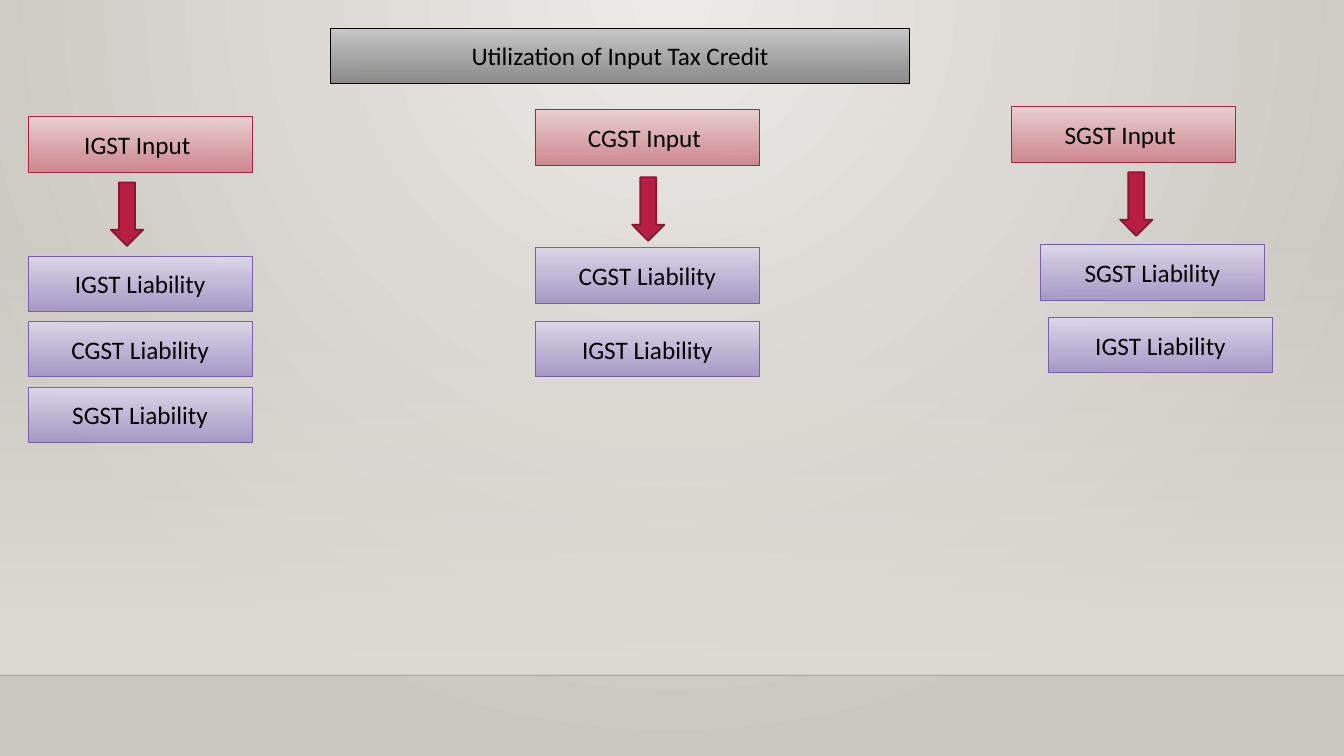
"""Build a slide showing how input tax credit is set off against GST liabilities."""
from lxml import etree
from pptx import Presentation
from pptx.dml.color import RGBColor
from pptx.enum.shapes import MSO_CONNECTOR, MSO_SHAPE
from pptx.enum.text import MSO_ANCHOR, PP_ALIGN
from pptx.oxml.ns import qn
from pptx.util import Inches, Pt

RECTANGLE, DOWN_ARROW = MSO_SHAPE.RECTANGLE, MSO_SHAPE.DOWN_ARROW
STRAIGHT = MSO_CONNECTOR.STRAIGHT
MIDDLE, CENTER = MSO_ANCHOR.MIDDLE, PP_ALIGN.CENTER

THEME = {
    "font": {"name": "Calibri", "size": Pt(18), "bold": False},
    "text": "000000",
    "backdrop": ("ECEAE7", "CAC7C1"),
    "panel": "DFDBD5",
    "floor_line": "000001",
    "title": {"colors": ("C8C8C8", "848484"), "line": "000000"},
    "input": {"colors": ("EAD1D3", "CD828A"), "line": "B71E42"},
    "liability": {"colors": ("DCD8E8", "A395C6"), "line": "795FAF"},
    "arrow": {"fill": "B71E42", "line": "871631"},
}
SLIDE_WIDTH, SLIDE_HEIGHT = 13.33, 7.5
FLOOR_TOP = 6.7
BOX_WIDTH, BOX_HEIGHT = 2.22, 0.55
ARROW_WIDTH, ARROW_HEIGHT = 0.32, 0.63

FLOWS = [
    {"input": ("IGST Input ", 0.28, 1.16), "arrow": (1.1, 1.81),
     "liabilities": [("IGST Liability", 0.28, 2.54), ("CGST Liability", 0.28, 3.19),
                     ("SGST Liability", 0.28, 3.84)]},
    {"input": ("CGST Input ", 5.31, 1.09), "arrow": (6.27, 1.76),
     "liabilities": [("CGST Liability", 5.31, 2.46), ("IGST Liability", 5.31, 3.19)]},
    {"input": ("SGST Input ", 10.03, 1.06), "arrow": (11.11, 1.71),
     "liabilities": [("SGST Liability", 10.32, 2.43), ("IGST Liability", 10.4, 3.15)]},
]


def apply_gradient(fill, element, colors, alphas=(100, 100)):
    """Fill from top to bottom and return the gradient element."""
    fill.gradient()
    fill.gradient_angle = 270
    gradient = next(element.iter(qn("a:gradFill")))
    for stop, color, alpha in zip(fill.gradient_stops, colors, alphas):
        stop.color.rgb = RGBColor.from_string(color)
    for tint, alpha in zip(gradient.iter(qn("a:srgbClr")), alphas):
        if alpha < 100:
            etree.SubElement(tint, qn("a:alpha"), val=str(alpha * 1000))
    return gradient


def format_box(box, text, style):
    """Give a box its gradient, outline and centred label."""
    apply_gradient(box.fill, box._element, style["colors"], (100, 92))
    box.line.color.rgb = RGBColor.from_string(style["line"])
    box.line.width = Pt(0.75)
    frame = box.text_frame
    frame.word_wrap = True
    frame.vertical_anchor = MIDDLE
    para = frame.paragraphs[0]
    para.alignment = CENTER
    span = para.add_run()
    span.text = text
    for name, value in THEME["font"].items():
        setattr(span.font, name, value)
    span.font.color.rgb = RGBColor.from_string(THEME["text"])


deck = Presentation()
deck.slide_width, deck.slide_height = Inches(SLIDE_WIDTH), Inches(SLIDE_HEIGHT)
page = deck.slides.add_slide(deck.slide_layouts[5])

backdrop = apply_gradient(page.background.fill, page._element, THEME["backdrop"])
backdrop.remove(backdrop.find(qn("a:lin")))
glow = etree.SubElement(backdrop, qn("a:path"), {"path": "circle"})
etree.SubElement(glow, qn("a:fillToRect"), l="43000", t="0", r="43000", b="100000")

panel = page.shapes.add_shape(
    RECTANGLE, 0, Inches(2.21), Inches(SLIDE_WIDTH), Inches(FLOOR_TOP - 2.21))
panel.shadow.inherit = False
panel.line.fill.background()
apply_gradient(panel.fill, panel._element, (THEME["panel"],) * 2, (0, 100))

floor_line = page.shapes.add_connector(
    STRAIGHT, 0, Inches(FLOOR_TOP), Inches(SLIDE_WIDTH), Inches(FLOOR_TOP))
floor_line.line.color.rgb = RGBColor.from_string(THEME["floor_line"])
floor_line.line.width = Pt(1)
line_tint = next(floor_line._element.iter(qn("a:srgbClr")))
etree.SubElement(line_tint, qn("a:alpha"), val="20000")
etree.SubElement(floor_line._element.spPr, qn("a:effectLst"))

title = page.shapes.title
title.left, title.top = Inches(3.28), Inches(0.28)
title.width, title.height = Inches(5.74), Inches(BOX_HEIGHT)
format_box(title, "Utilization of Input Tax Credit", THEME["title"])

for flow in FLOWS:
    labels = [(flow["input"], THEME["input"])]
    labels += [(liability, THEME["liability"]) for liability in flow["liabilities"]]
    for (text, left, top), style in labels:
        box = page.shapes.add_shape(
            RECTANGLE, Inches(left), Inches(top), Inches(BOX_WIDTH), Inches(BOX_HEIGHT))
        box.shadow.inherit = False
        format_box(box, text, style)
    left, top = flow["arrow"]
    arrow = page.shapes.add_shape(
        DOWN_ARROW, Inches(left), Inches(top), Inches(ARROW_WIDTH), Inches(ARROW_HEIGHT))
    arrow.shadow.inherit = False
    arrow.fill.solid()
    arrow.fill.fore_color.rgb = RGBColor.from_string(THEME["arrow"]["fill"])
    arrow.line.color.rgb = RGBColor.from_string(THEME["arrow"]["line"])
    arrow.line.width = Pt(1.25)

deck.save("out.pptx")
